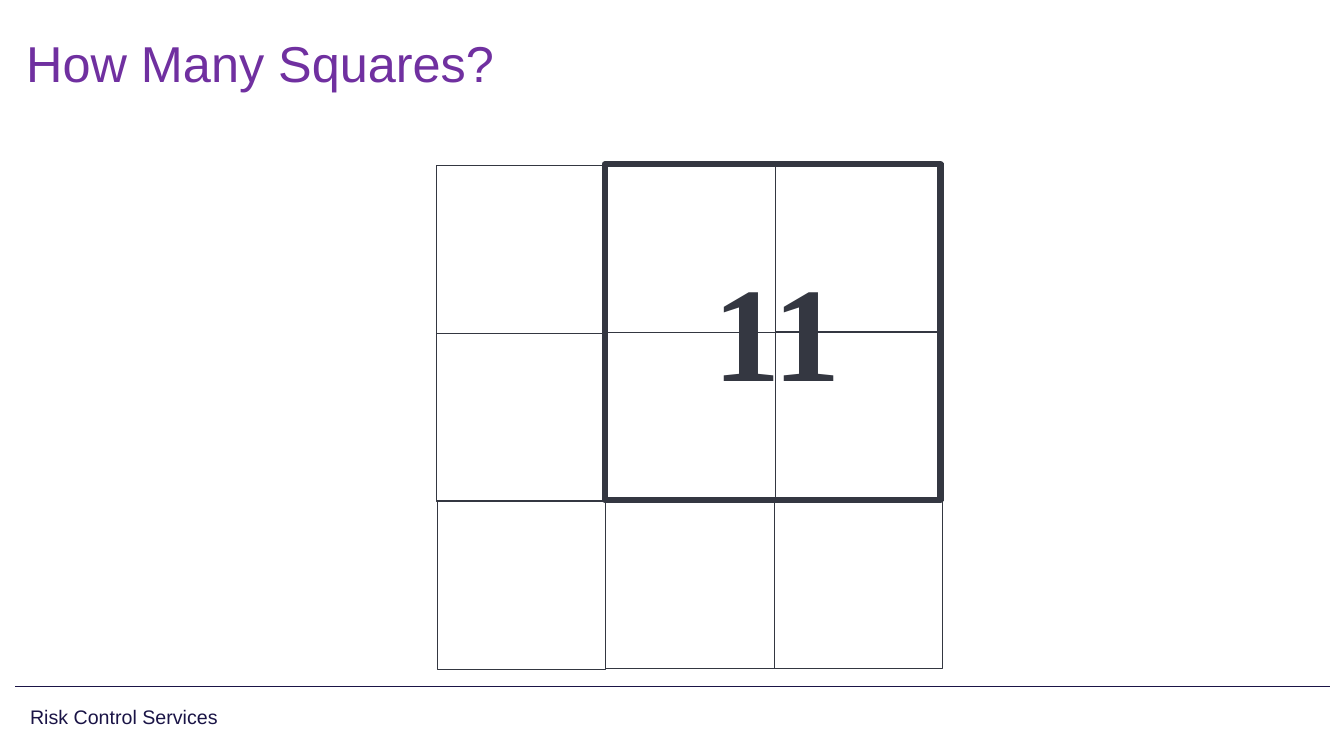
from lxml import etree
from pptx import Presentation
from pptx.dml.color import RGBColor
from pptx.enum.shapes import MSO_CONNECTOR as CONN, MSO_SHAPE as SHAPE
from pptx.enum.text import MSO_ANCHOR as ANCHOR, PP_ALIGN as ALIGN
from pptx.oxml.ns import qn
from pptx.util import Inches, Pt

PURPLE = RGBColor(0x70, 0x30, 0xA0)
NAVY = RGBColor(0x1A, 0x14, 0x46)
SLATE = RGBColor(0x34, 0x37, 0x41)

CELL = 1.67
# Left and top of each small square, row by row
GRID = [
    [(4.33, 1.64), (6.02, 1.63), (7.69, 1.62)],
    [(4.33, 3.31), (6.02, 3.3), (7.69, 3.3)],
    [(4.34, 4.97), (6.01, 4.96), (7.68, 4.96)],
]


def add_square(s, left, top, side, weight):
    sp = s.shapes.add_shape(SHAPE.RECTANGLE, Inches(left), Inches(top),
                            Inches(side), Inches(side))
    sp.shadow.inherit = False
    sp.fill.background()
    sp.line.color.rgb = SLATE
    sp.line.width = Pt(weight)


def add_rule(s, left, right, y):
    ln = s.shapes.add_connector(CONN.STRAIGHT, Inches(left), Inches(y),
                                Inches(right), Inches(y))
    ln.line.color.rgb = NAVY
    ln.line.width = Pt(1)
    etree.SubElement(ln._element.spPr, qn("a:effectLst"))


def place(sp, left, top, width, height):
    sp.left, sp.top = Inches(left), Inches(top)
    sp.width, sp.height = Inches(width), Inches(height)


def write(sp, text, size, color, font="Arial", bold=False,
          align=ALIGN.LEFT, anchor=ANCHOR.MIDDLE, spacing=0.9):
    tf = sp.text_frame
    tf.word_wrap = True
    tf.vertical_anchor = anchor
    p = tf.paragraphs[0]
    p.alignment = align
    p.line_spacing = spacing
    r = p.add_run()
    r.text = text
    r.font.name = font
    r.font.size = Pt(size)
    r.font.bold = bold
    r.font.color.rgb = color


def add_text(s, box, text, size, color, **style):
    sp = s.shapes.add_textbox(*(Inches(v) for v in box))
    write(sp, text, size, color, **style)


def main():
    prs = Presentation()
    prs.slide_width, prs.slide_height = Inches(13.33), Inches(7.5)
    s = prs.slides.add_slide(prs.slide_layouts[5])

    title = s.shapes.title
    place(title, 0.16, 0.25, 11.26, 0.82)
    write(title, "How Many Squares?", 36, PURPLE)

    add_text(s, (0.2, 6.91, 4.37, 0.42), "Risk Control Services", 14, NAVY)
    add_rule(s, 0.15, 13.19, 6.81)

    for row in GRID:
        for left, top in row:
            add_square(s, left, top, CELL, 0.75)
    add_square(s, 6, 1.63, 3.33, 4.5)

    add_text(s, (6.92, 2.4, 1.58, 1.7), "11", 96, SLATE,
             font="Times New Roman", bold=True, align=ALIGN.CENTER,
             anchor=ANCHOR.BOTTOM, spacing=1.0)

    prs.save("out.pptx")


if __name__ == "__main__":
    main()
